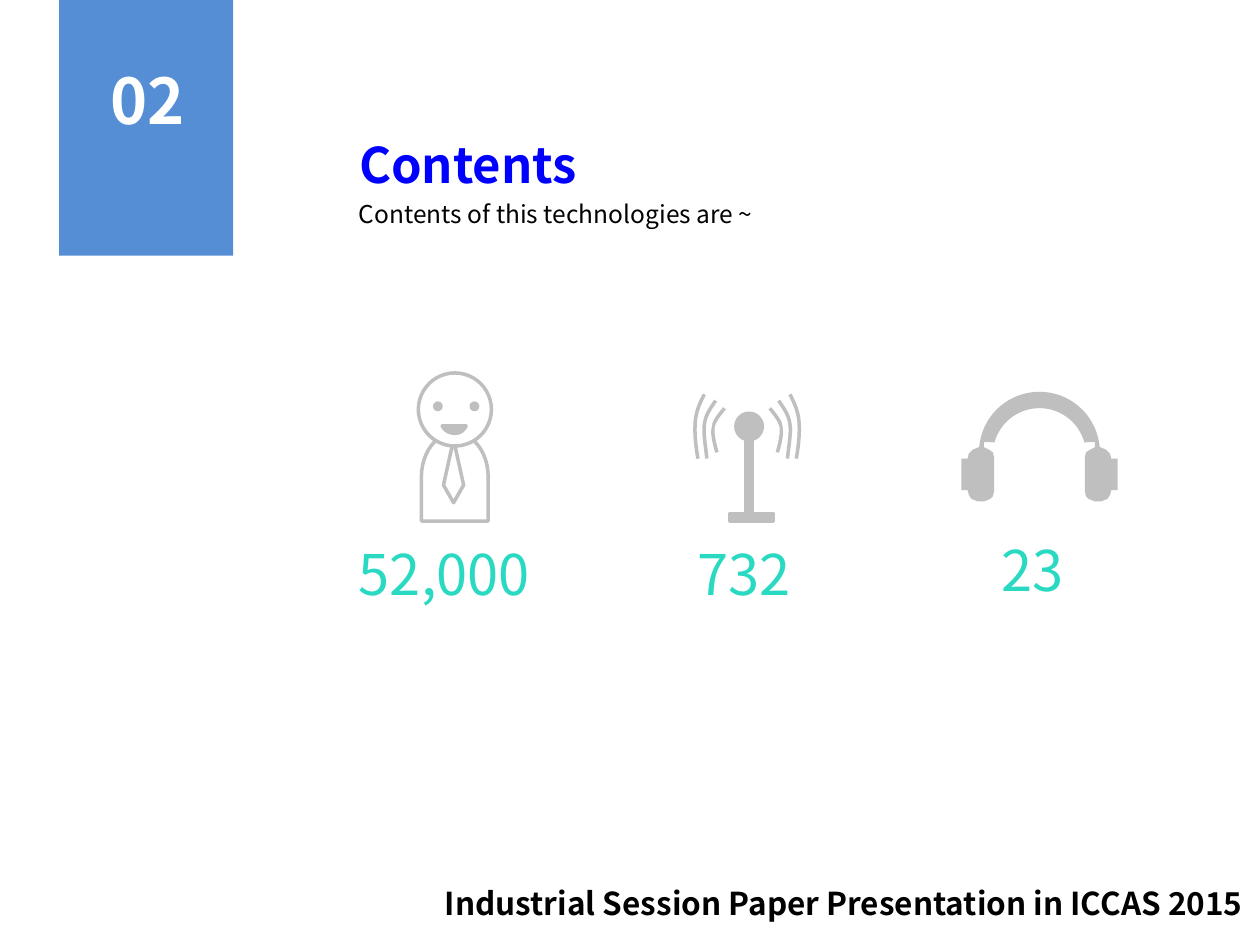
from math import cos, radians, sin

from pptx import Presentation
from pptx.dml.color import RGBColor
from pptx.enum.shapes import MSO_SHAPE
from pptx.enum.text import MSO_ANCHOR, MSO_AUTO_SIZE, PP_ALIGN
from pptx.util import Pt

PX = 9144
FONT = "Noto Sans CJK KR"
GRAY, WHITE, BLACK, TEAL = "BFBFBF", "FFFFFF", "000000", "29D9C2"
color = RGBColor.from_string


def paint(shape, fill, line=GRAY):
    shape.shadow.inherit = False
    shape.fill.solid()
    shape.fill.fore_color.rgb = color(fill)
    if line:
        shape.line.color.rgb = color(line)
        shape.line.width = Pt(2)
    else:
        shape.line.fill.background()


def bezier(start, first, second, end, steps=12):
    points = []
    for step in range(steps + 1):
        t = step / steps
        weights = ((1 - t) ** 3, 3 * t * (1 - t) ** 2, 3 * t * t * (1 - t), t ** 3)
        controls = (start, first, second, end)
        points.append(tuple(sum(w * c[axis] for w, c in zip(weights, controls)) for axis in (0, 1)))
    return points


presentation = Presentation()
presentation.slide_width = 1000 * PX
presentation.slide_height = 750 * PX
slide = presentation.slides.add_slide(presentation.slide_layouts[5])
shapes = slide.shapes

presets = [
    (MSO_SHAPE.RECTANGLE, 47, 0, 138, 203, "558ED5", None, 0),
    (MSO_SHAPE.FLOWCHART_DELAY, 326, 352, 70, 53, WHITE, GRAY, 270),
    (MSO_SHAPE.OVAL, 584, 328, 21, 21, GRAY, GRAY, 0),
    (MSO_SHAPE.RECTANGLE, 592, 343, 5, 64, GRAY, GRAY, 0),
    (MSO_SHAPE.RECTANGLE, 579, 408, 35, 6, GRAY, GRAY, 0),
]
face = [
    (MSO_SHAPE.OVAL, 332, 296, 58, 58, WHITE, GRAY, 0),
    (MSO_SHAPE.OVAL, 345, 320, 5, 5, GRAY, GRAY, 0),
    (MSO_SHAPE.OVAL, 374, 320, 5, 5, GRAY, GRAY, 0),
]

tie = [(360, 349), (368, 385), (360, 399), (352, 385)]
smile = [(351, 338)] + bezier((370, 338), (368, 342), (365, 344), (361, 344))
smile += bezier((361, 344), (357, 344), (353, 342), (351, 338))

waves = []
for curves in (
    [(575, 324), (572, 328), (568, 332), (566, 338), (565, 344), (567, 352), (569, 359)],
    [(568, 318), (564, 324), (560, 329), (559, 337), (558, 344), (560, 354), (561, 364)],
    [(559, 313), (556, 319), (553, 325), (552, 333), (551, 342), (552, 353), (554, 364)],
):
    wave = bezier(*curves[:4]) + bezier(*curves[3:])[1:]
    waves += [wave, [(1186 - x, y) for x, y in wave]]

outer_arc = [(825 - 48 * sin(radians(a)), 359 - 48 * cos(radians(a))) for a in range(0, 86, 5)]
inner_arc = [(825 - 37 * sin(radians(a)), 361 - 37 * cos(radians(a))) for a in range(75, -1, -5)]
ear_cup = [
    (772, 357), (769, 360), (768, 364), (763, 364), (763, 389), (768, 389),
    (769, 393), (771, 396), (776, 398), (781, 398), (786, 396), (788, 394),
    (789, 390), (789, 363), (788, 359), (785, 357), (781, 355), (781, 351), (788, 351),
]
left_half = outer_arc + ear_cup + inner_arc
headphones = left_half + [(1650 - x, y) for x, y in reversed(left_half)]

outlines = [(wave, False, WHITE, GRAY) for wave in waves]
outlines += [(smile, True, GRAY, GRAY), (headphones, True, GRAY, None)]

for group, group_outlines in ((presets, [(tie, True, WHITE, GRAY)]), (face, outlines)):
    for kind, left, top, width, height, fill, line, rotation in group:
        shape = shapes.add_shape(kind, left * PX, top * PX, width * PX, height * PX)
        shape.rotation = rotation
        paint(shape, fill, line)
    for points, closed, fill, line in group_outlines:
        scaled = [(round(x * PX), round(y * PX)) for x, y in points]
        builder = shapes.build_freeform(*scaled[0])
        builder.add_line_segments(scaled[1:], close=closed)
        paint(builder.convert_to_shape(), fill, line)

texts = [
    ("Contents", 275, 102, 327, 57, 28, "0000FF", True),
    ("Contents of this technologies are ~", 275, 153, 658, 34, 14, BLACK, False),
    ("02", 78, 44, 82, 71, 36, WHITE, True),
    ("52,000", 275, 423, 192, 64, 32, TEAL, False),
    ("732", 544, 423, 110, 64, 32, TEAL, False),
    ("23", 785, 420, 110, 64, 32, TEAL, False),
    ("Industrial Session Paper Presentation in ICCAS 2015", 319, 697, 677, 40, 18, BLACK, True),
]
for text, left, top, width, height, size, text_color, bold in texts:
    box = shapes.title if text == "Contents" else shapes.add_textbox(0, 0, PX, PX)
    box.left, box.top, box.width, box.height = left * PX, top * PX, width * PX, height * PX
    frame = box.text_frame
    frame.text = text
    frame.word_wrap = text != "02"
    frame.auto_size = MSO_AUTO_SIZE.SHAPE_TO_FIT_TEXT
    frame.vertical_anchor = MSO_ANCHOR.TOP
    paragraph = frame.paragraphs[0]
    paragraph.alignment = PP_ALIGN.RIGHT if text.startswith("Industrial") else PP_ALIGN.LEFT
    paragraph.font.name = FONT
    paragraph.font.size = Pt(size)
    paragraph.font.bold = bold
    paragraph.font.color.rgb = color(text_color)

presentation.save("out.pptx")
